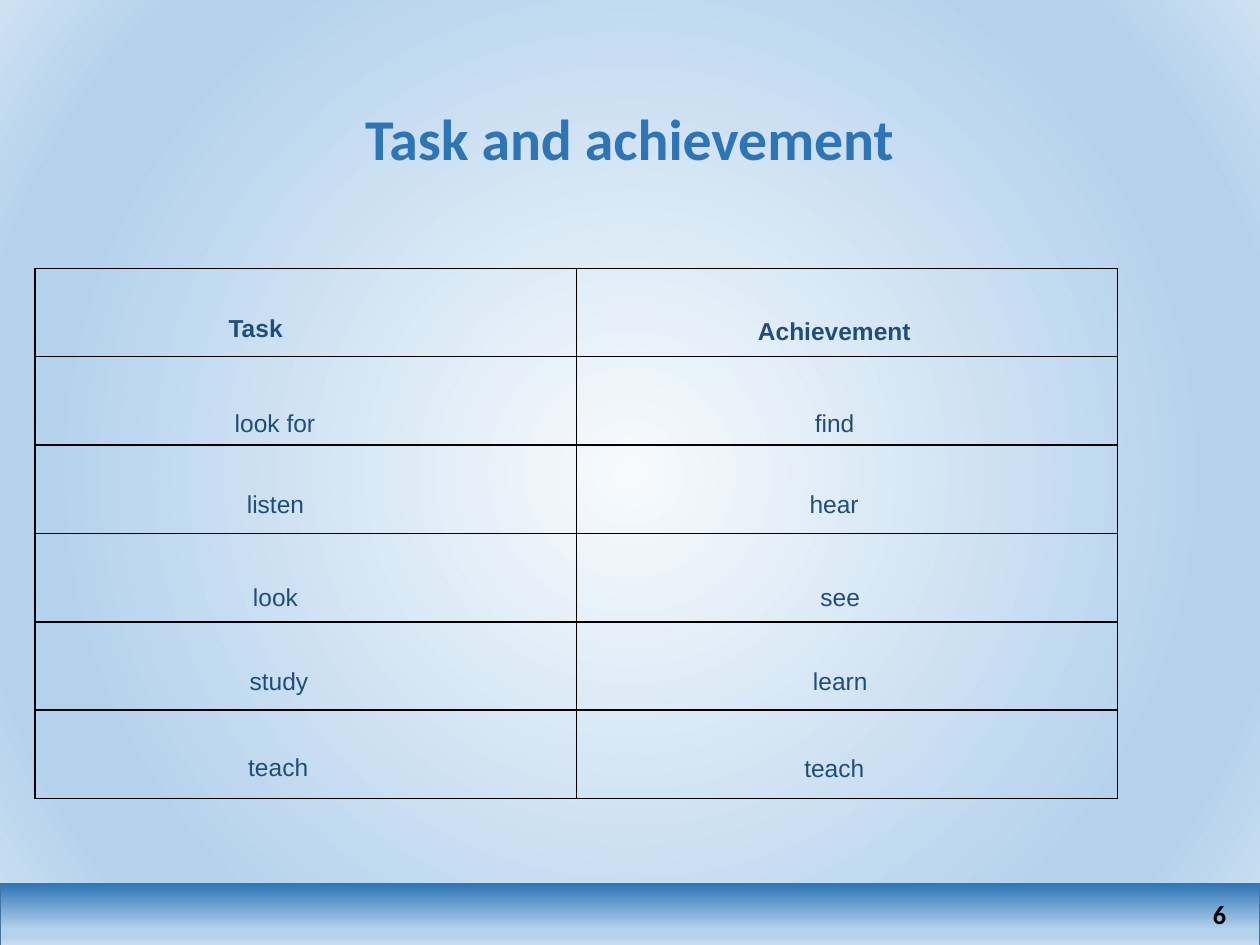
"""Build the slide that pairs task verbs with achievement verbs."""
from dataclasses import dataclass

from lxml.etree import SubElement
from pptx import Presentation
from pptx.dml.color import RGBColor
from pptx.enum.shapes import MSO_SHAPE
from pptx.enum.text import MSO_ANCHOR, PP_ALIGN
from pptx.oxml import parse_xml
from pptx.oxml.ns import nsdecls, qn
from pptx.util import Cm, Pt

BLACK = RGBColor(0x00, 0x00, 0x00)
NAVY = RGBColor(0x1F, 0x4E, 0x79)
BLUE = RGBColor(0x2E, 0x75, 0xB6)
EDGE_BLUE = RGBColor(0x43, 0x73, 0x9E)
SKY = RGBColor(0xB5, 0xD2, 0xEC)
PALE_SKY = RGBColor(0xCE, 0xE1, 0xF2)
NEAR_WHITE = RGBColor(0xF7, 0xFA, 0xFD)

RADIAL = ('<a:path path="circle"><a:fillToRect l="50000" t="50000" '
          'r="50000" b="50000"/></a:path>')
DOWNWARD = '<a:lin ang="5400000" scaled="0"/>'
ROWS, COLUMNS = 6, 2


@dataclass
class Word:
    text: str
    left: float
    top: float
    width: float
    bold: bool = False


WORDS = [
    Word("Task", 2.31, 5.64, 5.69, True),
    Word("Achievement", 13.67, 5.69, 6.3, True),
    Word("look for", 3.07, 7.54, 4.95),
    Word("find", 14.27, 7.54, 5.11),
    Word("listen", 3.23, 9.19, 4.65),
    Word("hear", 13.97, 9.19, 5.69),
    Word("look", 3.23, 11.05, 4.65),
    Word("see", 14.17, 11.05, 5.54),
    Word("study", 3.15, 12.75, 4.95),
    Word("learn", 14.91, 12.75, 4.06),
    Word("teach", 4.11, 14.48, 3),
    Word("teach", 15.32, 14.5, 3),
]


def apply_gradient(properties, stops: list, direction: str) -> None:
    """Replace the solid fill in the given properties with a gradient."""
    stop_xml = "".join(
        f'<a:gs pos="{percent * 1000}"><a:srgbClr val="{color}"/></a:gs>'
        for percent, color in stops)
    gradient = parse_xml(
        f'<a:gradFill {nsdecls("a")} rotWithShape="1">'
        f'<a:gsLst>{stop_xml}</a:gsLst>{direction}</a:gradFill>')
    properties.replace(properties.find(qn("a:solidFill")), gradient)


def style_paragraph(paragraph, font_name: str, size: float, color: RGBColor,
                    bold: bool, alignment: PP_ALIGN) -> None:
    """Set the font and alignment of a paragraph."""
    paragraph.alignment = alignment
    font = paragraph.font
    font.name, font.size, font.bold = font_name, Pt(size), bold
    font.color.rgb = color


def paint_background(slide) -> None:
    """Give the slide its radial gradient."""
    slide.background.fill.solid()
    stops = [(0, NEAR_WHITE), (74, SKY), (83, SKY), (100, PALE_SKY)]
    apply_gradient(slide.element.find(".//" + qn("p:bgPr")), stops, RADIAL)


def add_footer(slide) -> None:
    """Draw the footer band and the page number."""
    band = slide.shapes.add_shape(
        MSO_SHAPE.RECTANGLE, Cm(0), Cm(17.81), Cm(25.4), Cm(1.3))
    band.shadow.inherit = False
    band.line.color.rgb = EDGE_BLUE
    band.line.width = Pt(1)
    band.fill.solid()
    stops = [(0, BLUE), (72, SKY), (83, SKY), (100, PALE_SKY)]
    apply_gradient(band.element.spPr, stops, DOWNWARD)

    page_number = slide.shapes.add_textbox(
        Cm(23.65), Cm(17.98), Cm(1.32), Cm(0.91)).text_frame
    page_number.word_wrap = True
    page_number.vertical_anchor = MSO_ANCHOR.MIDDLE
    page_number.text = "6"
    style_paragraph(page_number.paragraphs[0], "Calibri", 15, BLACK, True,
                    PP_ALIGN.RIGHT)


def fill_title(slide) -> None:
    """Place and format the slide title."""
    title = slide.shapes.title
    title.left, title.top = Cm(1.75), Cm(1.02)
    title.width, title.height = Cm(21.89), Cm(3.68)
    title.text_frame.text = "Task and achievement"
    title.text_frame.vertical_anchor = MSO_ANCHOR.MIDDLE
    heading = title.text_frame.paragraphs[0]
    heading.line_spacing = 0.9
    style_paragraph(heading, "Calibri", 33, BLUE, True, PP_ALIGN.CENTER)


def outline_cell(cell) -> None:
    """Leave a cell unfilled with a thin black border on every side."""
    properties = cell._tc.get_or_add_tcPr()
    for side in ("a:lnL", "a:lnR", "a:lnT", "a:lnB"):
        border = SubElement(properties, qn(side), w=str(Pt(1)))
        solid = SubElement(border, qn("a:solidFill"))
        SubElement(solid, qn("a:srgbClr"), val=str(BLACK))
    cell.fill.background()


def add_grid(slide) -> None:
    """Add the empty table behind the words."""
    grid = slide.shapes.add_table(
        ROWS, COLUMNS, Cm(0.71), Cm(5.41), Cm(21.82), Cm(10.69)).table
    grid.first_row = grid.horz_banding = False
    for cell in grid.iter_cells():
        outline_cell(cell)


def add_word(slide, word: Word) -> None:
    """Add one centred word over the table."""
    frame = slide.shapes.add_textbox(
        Cm(word.left), Cm(word.top), Cm(word.width), Cm(1.27)).text_frame
    frame.word_wrap = True
    frame.vertical_anchor = MSO_ANCHOR.BOTTOM
    frame.margin_bottom = Cm(0)
    frame.text = word.text
    style_paragraph(frame.paragraphs[0], "Arial", 14, NAVY, word.bold,
                    PP_ALIGN.CENTER)


def main() -> None:
    """Assemble and save the slide."""
    presentation = Presentation()
    presentation.slide_width, presentation.slide_height = Cm(25.4), Cm(19.05)
    slide = presentation.slides.add_slide(presentation.slide_layouts[5])
    paint_background(slide)
    fill_title(slide)
    add_footer(slide)
    add_grid(slide)
    for word in WORDS:
        add_word(slide, word)
    presentation.save("out.pptx")


if __name__ == "__main__":
    main()
